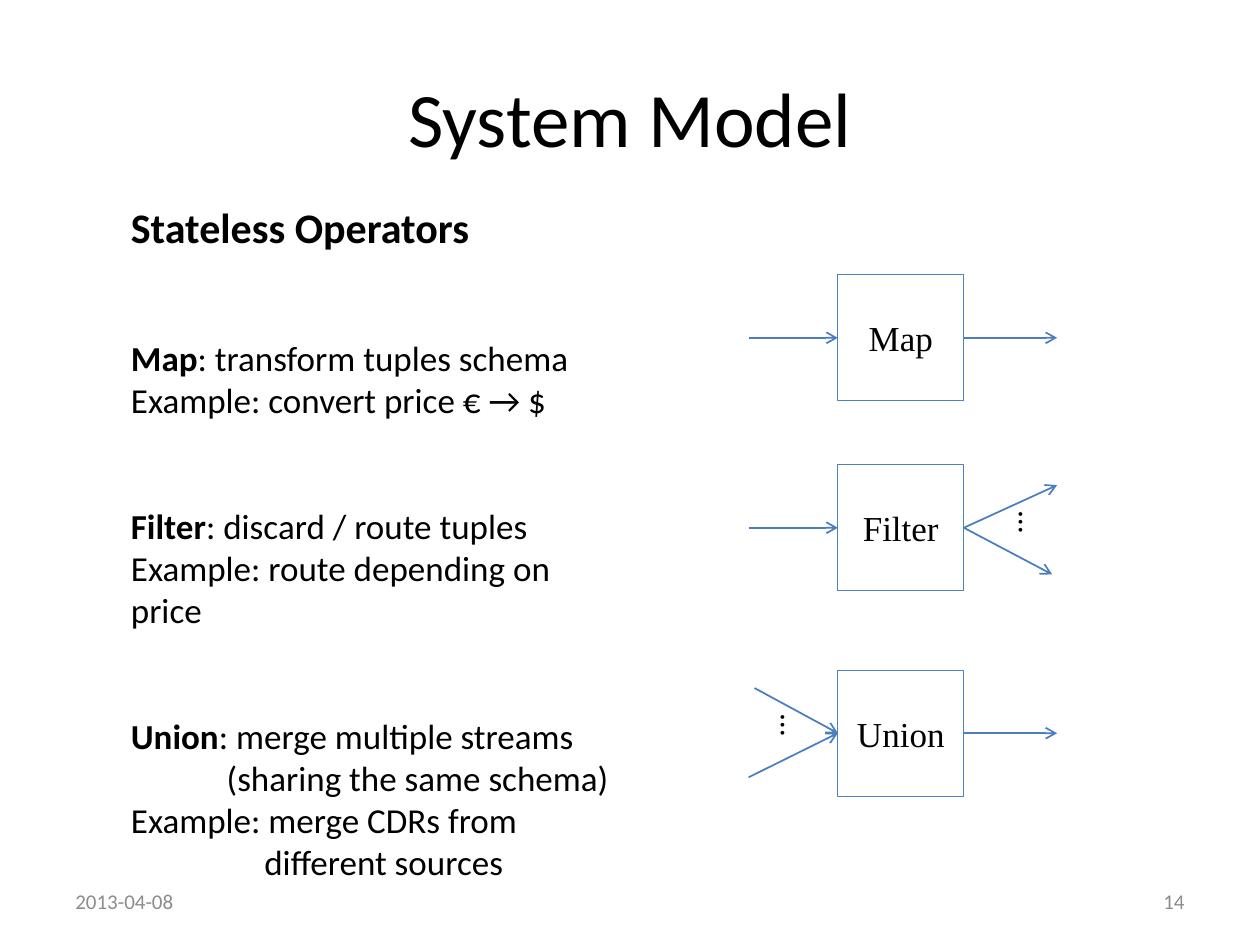
import pptx
import pptx.dml.color
import pptx.enum.shapes
import pptx.enum.text
import pptx.oxml
import pptx.oxml.ns
import pptx.util

Cm = pptx.util.Cm
Pt = pptx.util.Pt
ALIGN = pptx.enum.text.PP_ALIGN
ANCHOR = pptx.enum.text.MSO_ANCHOR

COLOURS = {"text": "000000", "footer": "8C8C8C", "box": "4F81BD", "arrow": "4B7EBC"}
SIDE = 2.54
BOX_LEFT = 16.89

OPERATORS = [
    ("Map", 5.54, [(-1.8, 0)], [(1.88, 0)]),
    ("Filter", 9.37, [(-1.8, 0)], [(1.88, -0.86), (1.78, 0.94)]),
    ("Union", 13.51, [(-1.8, 0.89), (-1.68, -0.91)], [(1.88, 0)]),
]

BODY = [
    ("Map", ": transform tuples schema", 0),
    ("", "Example: convert price € → $", 0),
    ("Filter", ": discard / route tuples", 0),
    ("", "Example: route depending on price", 0),
    ("Union", ": merge multiple streams", 0),
    ("", "(sharing the same schema)", 1.93),
    ("", "Example: merge CDRs from", 0),
    ("", "different sources", 2.69),
]


def colour(name):
    return pptx.dml.color.RGBColor.from_string(COLOURS[name])


def style(para, size, name="Calibri", tint="text", align=ALIGN.LEFT):
    para.alignment = align
    para.font.size = Pt(size)
    para.font.name = name
    para.font.color.rgb = colour(tint)


def add_text_box(page, left, top, width, height, wrap=True, anchor=ANCHOR.TOP):
    box = page.shapes.add_textbox(Cm(left), Cm(top), Cm(width), Cm(height))
    box.text_frame.word_wrap = wrap
    box.text_frame.vertical_anchor = anchor
    return box


def add_label(page, text, area, size, tint="text", align=ALIGN.LEFT):
    box = add_text_box(page, *area, anchor=ANCHOR.MIDDLE)
    para = box.text_frame.paragraphs[0]
    para.text = text
    style(para, size, tint=tint, align=align)


def add_body(page):
    frame = add_text_box(page, 2.39, 3.94, 10.29, 13.26).text_frame
    heading = frame.paragraphs[0]
    heading.text = "Stateless Operators"
    style(heading, 24)
    heading.font.bold = True
    for term, text, indent in BODY:
        para = frame.add_paragraph()
        style(para, 20)
        if term:
            para.space_before = Pt(48)
            span = para.add_run()
            span.text = term
            span.font.bold = True
        para.add_run().text = text
        if indent:
            properties = para._p.get_or_add_pPr()
            properties.set("marL", str(Cm(indent)))
            properties.set("indent", "0")


def add_arrow(group, start, end):
    arrow = group.shapes.add_connector(
        pptx.enum.shapes.MSO_CONNECTOR.STRAIGHT, *map(Cm, start + end)
    )
    arrow.line.color.rgb = colour("arrow")
    arrow.line.width = Pt(1)
    head = pptx.oxml.parse_xml(
        f'<a:tailEnd {pptx.oxml.ns.nsdecls("a")} type="arrow"/>'
    )
    arrow.line._get_or_add_ln().append(head)
    effects = pptx.oxml.parse_xml(f'<a:effectLst {pptx.oxml.ns.nsdecls("a")}/>')
    arrow._element.spPr.append(effects)


def add_operator(page, name, top, inputs, outputs):
    group = page.shapes.add_group_shape()
    box = group.shapes.add_shape(
        pptx.enum.shapes.MSO_SHAPE.RECTANGLE, Cm(BOX_LEFT), Cm(top), Cm(SIDE), Cm(SIDE)
    )
    box.shadow.inherit = False
    box.fill.background()
    box.line.color.rgb = colour("box")
    box.line.width = Pt(0.5)
    box.text_frame.vertical_anchor = ANCHOR.MIDDLE
    box.text_frame.word_wrap = False
    para = box.text_frame.paragraphs[0]
    para.text = name
    style(para, 20, name="Times New Roman", align=ALIGN.CENTER)

    middle = top + SIDE / 2
    right = BOX_LEFT + SIDE
    for dx, dy in inputs:
        add_arrow(group, (BOX_LEFT + dx, middle + dy), (BOX_LEFT, middle))
    for dx, dy in outputs:
        add_arrow(group, (right, middle), (right + dx, middle + dy))


def add_dots(page, left, top):
    box = add_text_box(page, left, top, 1.14, 1.02, wrap=False)
    box.rotation = 90
    para = box.text_frame.paragraphs[0]
    para.text = "…"
    style(para, 18)


def main():
    deck = pptx.Presentation()
    deck.slide_width = Cm(25.4)
    deck.slide_height = Cm(19.05)
    page = deck.slides.add_slide(deck.slide_layouts[6])

    add_body(page)
    add_label(page, "System Model", (1.27, 0.76, 22.86, 3.18), 44, align=ALIGN.CENTER)
    for operator in OPERATORS:
        add_operator(page, *operator)
    add_dots(page, 20.22, 10.13)
    add_dots(page, 15.42, 14.22)
    add_label(page, "2013-04-08", (1.27, 17.65, 5.92, 1.02), 12, "footer")
    add_label(page, "14", (18.21, 17.65, 5.92, 1.02), 12, "footer", ALIGN.RIGHT)

    deck.save("out.pptx")


if __name__ == "__main__":
    main()
